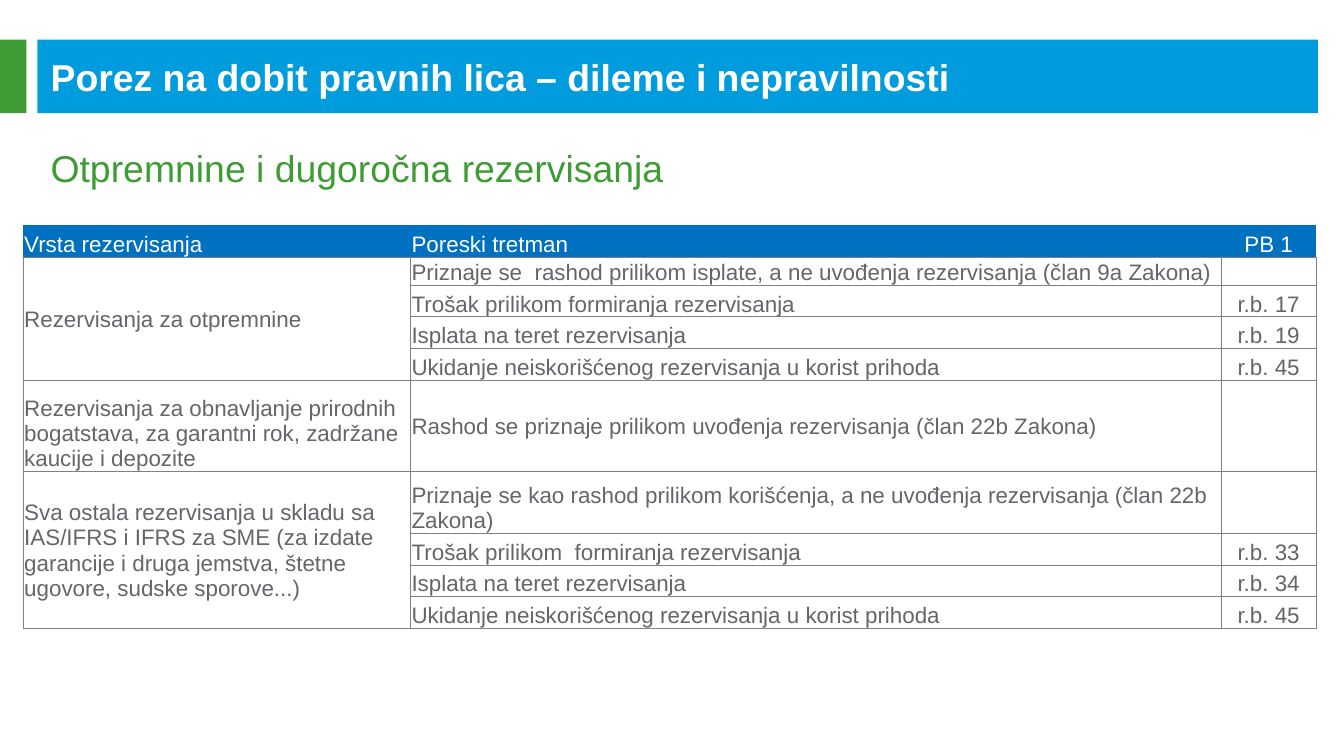
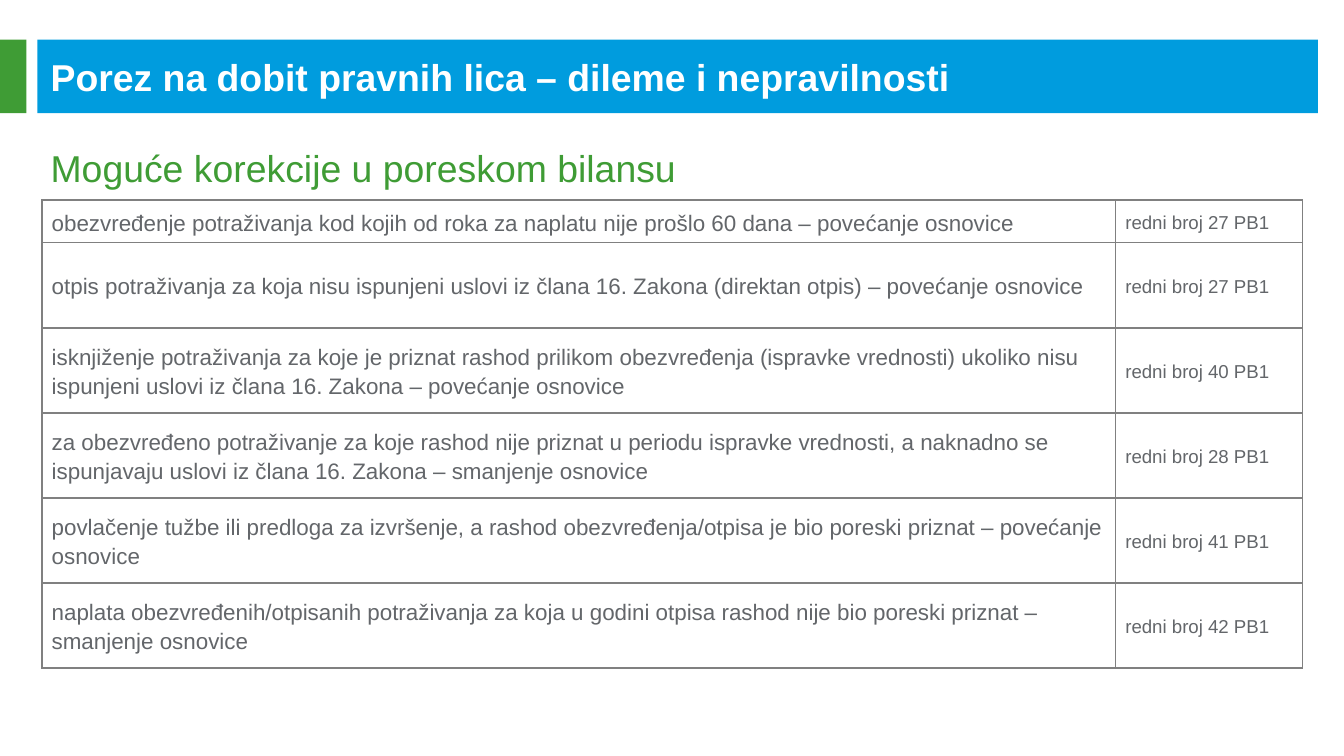
from lxml.etree import SubElement
from pptx import Presentation
from pptx.dml.color import RGBColor as RGB
from pptx.enum.shapes import MSO_SHAPE as SHAPE
from pptx.enum.text import MSO_ANCHOR as ANCHOR, PP_ALIGN as ALIGN
from pptx.oxml.ns import qn
from pptx.util import Pt


class Theme:
    font = "Arial"
    blue = RGB.from_string("009CDE")
    green = RGB.from_string("3F9C35")
    header = RGB.from_string("0070C0")
    text = RGB.from_string("63666A")
    white = RGB.from_string("FFFFFF")
    rule = "808080"
    heading = 20
    body = 12
    note = 10


def put(tf, text, size=Theme.body, color=Theme.text, bold=False, align=ALIGN.LEFT, spacing=1.0):
    tf.word_wrap = True
    p = tf.paragraphs[0]
    p.alignment = align
    p.line_spacing = spacing
    if not text:
        SubElement(p._p, qn("a:endParaRPr"), sz=str(size * 100))
        return
    r = p.add_run()
    r.text = text
    r.font.name = Theme.font
    r.font.size = Pt(size)
    r.font.bold = bold
    r.font.color.rgb = color


def add_grid(s, left, top, widths, heights, margins, rule_width):
    tbl = s.shapes.add_table(len(heights), len(widths), Pt(left), Pt(top),
                             Pt(sum(widths)), Pt(sum(heights))).table
    tbl.first_row = tbl.horz_banding = False
    for col, width in zip(tbl.columns, widths):
        col.width = Pt(width)
    for row, height in zip(tbl.rows, heights):
        row.height = Pt(height)
    for cell in tbl.iter_cells():
        cell.margin_left, cell.margin_top, cell.margin_right, cell.margin_bottom = map(Pt, margins)
        cell.vertical_anchor = ANCHOR.MIDDLE
        for side in ("lnL", "lnR", "lnT", "lnB"):
            ln = SubElement(cell._tc.get_or_add_tcPr(), qn(f"a:{side}"), w=str(Pt(rule_width)))
            SubElement(SubElement(ln, qn("a:solidFill")), qn("a:srgbClr"), val=Theme.rule)
        cell.fill.solid()
        cell.fill.fore_color.rgb = Theme.white
    return tbl


prs = Presentation()
prs.slide_width, prs.slide_height = Pt(720), Pt(405)

title = "Porez na dobit pravnih lica – dileme i nepravilnosti"
subtitles = ["Otpremnine i dugoročna rezervisanja", "Moguće korekcije u poreskom bilansu"]
bands = [(20, 686, Theme.blue), (0, 14.2, Theme.green)]

for subtitle in subtitles:
    s = prs.slides.add_slide(prs.slide_layouts[6])
    for left, width, color in bands:
        sp = s.shapes.add_shape(SHAPE.RECTANGLE, Pt(left), Pt(21.2), Pt(width), Pt(39.5))
        sp.shadow.inherit = False
        sp.fill.solid()
        sp.fill.fore_color.rgb = color
        sp.line.fill.background()
    tf = s.shapes.add_textbox(Pt(20), Pt(30), Pt(680), Pt(21.6)).text_frame
    tf.vertical_anchor = ANCHOR.MIDDLE
    put(tf, title, size=Theme.heading, color=Theme.white, bold=True)
    tf = s.shapes.add_textbox(Pt(20), Pt(72), Pt(686), Pt(38)).text_frame
    tf.margin_top = Pt(6)
    put(tf, subtitle, size=Theme.heading, color=Theme.green)

provisions_slide, corrections_slide = prs.slides

provisions = [
    ("Vrsta rezervisanja", "Poreski tretman", "PB 1"),
    ("Rezervisanja za otpremnine",
     "Priznaje se  rashod prilikom isplate, a ne uvođenja rezervisanja (član 9a Zakona)", ""),
    ("", "Trošak prilikom formiranja rezervisanja", "r.b. 17"),
    ("", "Isplata na teret rezervisanja", "r.b. 19"),
    ("", "Ukidanje neiskorišćenog rezervisanja u korist prihoda", "r.b. 45"),
    ("Rezervisanja za obnavljanje prirodnih bogatstava, za garantni rok, zadržane kaucije i depozite",
     "Rashod se priznaje prilikom uvođenja rezervisanja (član 22b Zakona)", ""),
    ("Sva ostala rezervisanja u skladu sa IAS/IFRS i IFRS za SME (za izdate garancije i druga "
     "jemstva, štetne ugovore, sudske sporove...)",
     "Priznaje se kao rashod prilikom korišćenja, a ne uvođenja rezervisanja (član 22b Zakona)", ""),
    ("", "Trošak prilikom  formiranja rezervisanja", "r.b. 33"),
    ("", "Isplata na teret rezervisanja", "r.b. 34"),
    ("", "Ukidanje neiskorišćenog rezervisanja u korist prihoda", "r.b. 45"),
]
tbl = add_grid(provisions_slide, 12.3, 120.7, (207.5, 434.5, 50.7),
               (17, 15, 17, 17, 17, 49, 33, 17, 17, 17), (0.7, 0.7, 0.7, 0), 0.5)
middle_cells = {(1, 0), (5, 1), (6, 0)}
for i, row in enumerate(provisions):
    for j, text in enumerate(row):
        cell = tbl.cell(i, j)
        if (i, j) not in middle_cells:
            cell.vertical_anchor = ANCHOR.BOTTOM
        put(cell.text_frame, text, color=Theme.text if i else Theme.white,
            align=ALIGN.CENTER if j == 2 else ALIGN.LEFT)
for cell in tbl.rows[0].cells:
    cell.fill.fore_color.rgb = Theme.header
    for side in ("lnL", "lnR", "lnT"):
        ln = cell._tc.tcPr.find(qn(f"a:{side}"))
        ln.remove(ln[0])
        SubElement(ln, qn("a:noFill"))
for first in (1, 6):
    tbl.cell(first, 0).merge(tbl.cell(first + 3, 0))

corrections = [
    ("obezvređenje potraživanja kod kojih od roka za naplatu nije prošlo 60 dana – povećanje osnovice", 27),
    ("otpis potraživanja za koja nisu ispunjeni uslovi iz člana 16. Zakona (direktan otpis) – "
     "povećanje osnovice", 27),
    ("isknjiženje potraživanja za koje je priznat rashod prilikom obezvređenja (ispravke vrednosti) "
     "ukoliko nisu ispunjeni uslovi iz člana 16. Zakona – povećanje osnovice", 40),
    ("za obezvređeno potraživanje za koje rashod nije priznat u periodu ispravke vrednosti, a naknadno "
     "se ispunjavaju uslovi iz člana 16. Zakona – smanjenje osnovice", 28),
    ("povlačenje tužbe ili predloga za izvršenje, a rashod obezvređenja/otpisa je bio poreski priznat – "
     "povećanje osnovice", 41),
    ("naplata obezvređenih/otpisanih potraživanja za koja u godini otpisa rashod nije bio poreski "
     "priznat – smanjenje osnovice", 42),
]
tbl = add_grid(corrections_slide, 22.5, 107.2, (575.2, 100), [22.8] + [45.6] * 5, (5.2, 0, 5.2, 0), 1)
for i, (text, number) in enumerate(corrections):
    put(tbl.cell(i, 0).text_frame, text, spacing=1.15)
    put(tbl.cell(i, 1).text_frame, f"redni broj {number} PB1", size=Theme.note, spacing=1.15)

prs.save("out.pptx")
